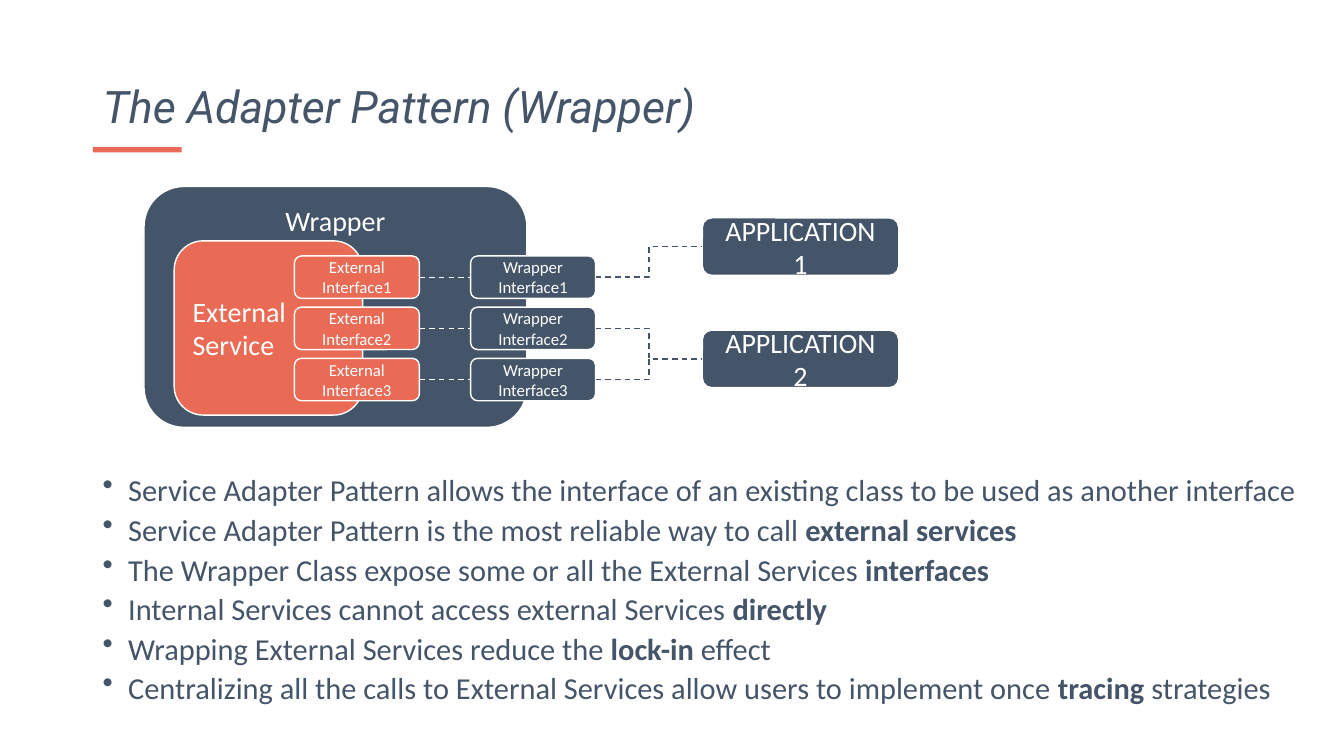
import pptx
import pptx.dml.color
import pptx.enum.dml
import pptx.enum.shapes
import pptx.enum.text
import pptx.oxml.xmlchemy
import pptx.util
from lxml import etree
from pptx.oxml.ns import qn

Cm = pptx.util.Cm
Pt = pptx.util.Pt
SHAPE = pptx.enum.shapes.MSO_SHAPE
LINE = pptx.enum.shapes.MSO_CONNECTOR
ANCHOR = pptx.enum.text.MSO_ANCHOR
ALIGN = pptx.enum.text.PP_ALIGN

COLORS = {"slate": "445469", "coral": "E96B56", "white": "FFFFFF"}
LEFT_SIDE, RIGHT_SIDE = 1, 3

BULLETS = [
    "Service Adapter Pattern allows the interface of an existing class to be used as another interface",
    "Service Adapter Pattern is the most reliable way to call **external services**",
    "The Wrapper Class expose some or all the External Services **interfaces**",
    "Internal Services cannot access external Services **directly**",
    "Wrapping External Services reduce the **lock-in **effect",
    "Centralizing all the calls to External Services allow users to implement once **tracing** strategies",
]


class Deck:
    def __init__(self, width, height):
        self.prs = pptx.Presentation()
        self.prs.slide_width = Cm(width)
        self.prs.slide_height = Cm(height)
        self.s = None

    def color(self, name):
        return pptx.dml.color.RGBColor.from_string(COLORS[name])

    def style(self, p, size, color, align, font="Calibri"):
        p.alignment = align
        p.font.name = font
        p.font.size = Pt(size)
        p.font.color.rgb = self.color(color)

    def title_slide(self, text, x, y, w, h):
        self.s = self.prs.slides.add_slide(self.prs.slide_layouts[5])
        sp = self.s.shapes.title
        sp.left, sp.top, sp.width, sp.height = Cm(x), Cm(y), Cm(w), Cm(h)
        tf = sp.text_frame
        tf.text = text
        tf.vertical_anchor = ANCHOR.BOTTOM
        p = tf.paragraphs[0]
        self.style(p, 32, "slate", ALIGN.LEFT, "Roboto")
        p.font.italic = True
        p.line_spacing = 0.9
        p.space_before = Pt(10)

    def bar(self, x, y, w, h, fill):
        sp = self.s.shapes.add_shape(SHAPE.RECTANGLE, Cm(x), Cm(y), Cm(w), Cm(h))
        sp.shadow.inherit = False
        sp.fill.solid()
        sp.fill.fore_color.rgb = self.color(fill)
        sp.line.fill.background()

    def box(self, text, x, y, w, h, fill, size=20, align=ALIGN.CENTER, anchor=ANCHOR.MIDDLE):
        sp = self.s.shapes.add_shape(SHAPE.ROUNDED_RECTANGLE, Cm(x), Cm(y), Cm(w), Cm(h))
        sp.shadow.inherit = False
        sp.fill.solid()
        sp.fill.fore_color.rgb = self.color(fill)
        sp.line.color.rgb = self.color("white")
        sp.line.width = Pt(1)
        tf = sp.text_frame
        tf.text = text
        tf.word_wrap = True
        tf.vertical_anchor = anchor
        self.style(tf.paragraphs[0], size, "white", align)
        return sp

    def link(self, source, target, kind, color):
        c = self.s.shapes.add_connector(kind, 0, 0, 0, 0)
        c.begin_connect(source, RIGHT_SIDE)
        c.end_connect(target, LEFT_SIDE)
        c.line.color.rgb = self.color(color)
        c.line.width = Pt(1)
        c.line.dash_style = pptx.enum.dml.MSO_LINE.DASH
        etree.SubElement(c._element.spPr, qn("a:effectLst"))

    def bullets(self, items, x, y, w, h):
        tf = self.s.shapes.add_textbox(Cm(x), Cm(y), Cm(w), Cm(h)).text_frame
        tf.word_wrap = True
        for i, item in enumerate(items):
            p = tf.paragraphs[0] if i == 0 else tf.add_paragraph()
            self.style(p, 21.7, "slate", ALIGN.LEFT)
            p.line_spacing = 0.7
            p.space_before = Pt(10)
            pPr = p._p.get_or_add_pPr()
            pPr.set("marL", str(Cm(0.64)))
            pPr.set("indent", str(-Cm(0.64)))
            bullet = etree.Element(qn("a:buChar"), char="•")
            pPr.find(qn("a:defRPr")).addprevious(bullet)
            for j, part in enumerate(item.split("**")):
                if part:
                    r = p.add_run()
                    r.text = part
                    if j % 2:
                        r.font.bold = True

    def save(self):
        self.prs.save("out.pptx")


def main():
    deck = Deck(33.87, 19.05)
    deck.title_slide("The Adapter Pattern (Wrapper)", 2.34, 0.46, 29.21, 3.02)
    deck.bar(2.34, 3.71, 2.24, 0.13, "coral")
    deck.box("Wrapper", 3.63, 4.7, 9.65, 6.07, "slate", anchor=ANCHOR.TOP)
    deck.box("External Service", 4.39, 6.07, 4.75, 4.39, "coral", align=ALIGN.LEFT)

    apps = [
        deck.box(f"APPLICATION {i + 1}", 17.7, 5.49 + 2.83 * i, 4.95, 1.45, "slate")
        for i in range(2)
    ]
    for i, app in enumerate([apps[0], apps[1], apps[1]]):
        y = 6.45 + 1.29 * i
        external = deck.box(f"External Interface{i + 1}", 7.42, y, 3.15, 1.07, "coral", 12)
        wrapper = deck.box(f"Wrapper Interface{i + 1}", 11.86, y, 3.15, 1.07, "slate", 12)
        deck.link(external, wrapper, LINE.STRAIGHT, "white")
        deck.link(wrapper, app, LINE.ELBOW, "slate")

    deck.bullets(BULLETS, 2.34, 12.01, 31.34, 6.99)
    deck.save()


if __name__ == "__main__":
    main()
